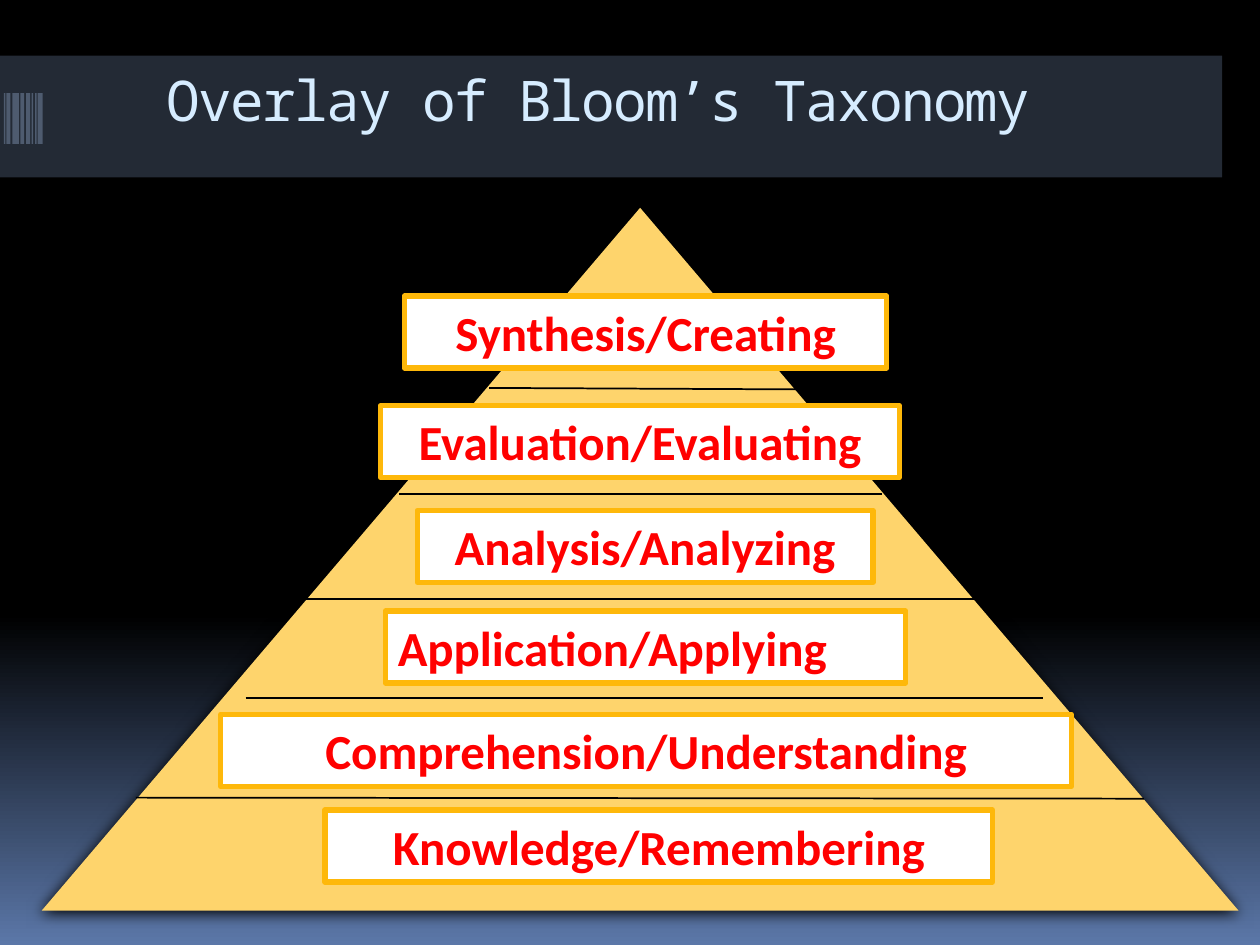
from copy import deepcopy

from lxml import etree
from pptx import Presentation
from pptx.dml.color import RGBColor as RGB
from pptx.enum.shapes import MSO_CONNECTOR as LINK, MSO_SHAPE as SHAPE
from pptx.enum.text import MSO_ANCHOR as ANCHOR, MSO_AUTO_SIZE as SIZE, PP_ALIGN as ALIGN
from pptx.oxml import parse_xml
from pptx.oxml.ns import nsdecls, qn
from pptx.util import Cm, Pt

COLORS = {
    "black": "000000", "sky": "5B77A8", "band": "586A86", "bar": "4E5B6F",
    "title": "D6ECFF", "sand": "FED46C", "white": "FFFFFF", "gold": "FEB80A",
    "red": "FF0000",
}


def color(name):
    return RGB.from_string(COLORS[name])


def block(kind, left, top, width, height, fill):
    """Add a filled shape without outline or shadow, measured in cm."""
    shape = slide.shapes.add_shape(kind, Cm(left), Cm(top), Cm(width), Cm(height))
    shape.shadow.inherit = False
    shape.fill.solid()
    shape.fill.fore_color.rgb = color(fill)
    shape.line.fill.background()
    return shape


deck = Presentation()
deck.slide_width, deck.slide_height = Cm(25.4), Cm(19.05)
slide = deck.slides.add_slide(deck.slide_layouts[6])

# Background: black down to 65 %, then fading to blue
back = slide.background.fill
back.gradient()
back.gradient_angle = 270
first = back.gradient_stops[0]._gs
first.addnext(deepcopy(first))
for stop, (place, name) in zip(back.gradient_stops, [(0, "black"), (0.65, "black"), (1, "sky")]):
    stop.position = place
    stop.color.rgb = color(name)

# Title band with its barcode
band = block(SHAPE.RECTANGLE, 0, 1.12, 24.64, 2.46, "band")
tint = band.fill._xPr.find(".//" + qn("a:srgbClr"))
etree.SubElement(tint, qn("a:alpha")).set("val", "40000")
BARS = [(0.08, 0.03), (0.13, 0.08), (0.25, 0.13), (0.41, 0.08),
        (0.53, 0.08), (0.64, 0.03), (0.71, 0.03), (0.76, 0.1)]
for left, width in BARS:
    block(SHAPE.RECTANGLE, left, 1.88, width, 1.02, "bar")

title = slide.shapes.add_textbox(Cm(1.27), Cm(1.27), Cm(21.59), Cm(2.11))
frame = title.text_frame
frame.word_wrap = True
frame.margin_top = Cm(0.06)
frame.vertical_anchor = ANCHOR.TOP
para = frame.paragraphs[0]
para.alignment = ALIGN.CENTER
run = para.add_run()
run.text = "Overlay of Bloom’s Taxonomy"
run.font.name = "Noto Sans Mono"
run.font.size = Pt(32)
run.font.color.rgb = color("title")
run.font._element.set("spc", "-100")

# Pyramid with a soft shadow
cone = block(SHAPE.ISOSCELES_TRIANGLE, 0.84, 4.19, 24.13, 14.17, "sand")
glow = parse_xml(
    f'<a:outerShdw {nsdecls("a")} blurRad="{Pt(8.5)}" dist="{Pt(1)}" dir="5400000" '
    f'rotWithShape="0"><a:srgbClr val="{COLORS["black"]}"/></a:outerShdw>')
cone._element.spPr.find(qn("a:effectLst")).append(glow)

# Lines between the levels: left, top, right, bottom
RULES = [(9.86, 7.82, 16.21, 7.85), (8.05, 9.96, 17.78, 9.96),
         (6.15, 12.07, 19.69, 12.07), (4.95, 14.07, 21.03, 14.07),
         (2.74, 16.08, 23.06, 16.1)]
for ends in RULES:
    rule = slide.shapes.add_connector(LINK.STRAIGHT, *map(Cm, ends))
    rule.line.color.rgb = color("black")
    rule.line.width = Pt(1)
    etree.SubElement(rule._element.spPr, qn("a:effectLst"))

# Level labels: text, left, top, width, alignment
LEVELS = [
    ("Synthesis/Creating", 8.15, 5.97, 9.73, ALIGN.CENTER),
    ("Evaluation/Evaluating", 7.67, 8.18, 10.46, ALIGN.CENTER),
    ("Analysis/Analyzing", 8.41, 10.29, 9.19, ALIGN.CENTER),
    ("Application/Applying", 7.77, 12.32, 10.49, ALIGN.LEFT),
    ("Comprehension/Understanding", 4.45, 14.4, 17.15, ALIGN.CENTER),
    ("Knowledge/Remembering", 6.55, 16.33, 13.46, ALIGN.CENTER),
]
for text, left, top, width, align in LEVELS:
    label = block(SHAPE.RECTANGLE, left, top, width, 1.45, "white")
    label.line.color.rgb = color("gold")
    label.line.width = Pt(3)
    frame = label.text_frame
    frame.word_wrap = True
    frame.auto_size = SIZE.SHAPE_TO_FIT_TEXT
    frame.vertical_anchor = ANCHOR.TOP
    para = frame.paragraphs[0]
    para.alignment = align
    run = para.add_run()
    run.text = text
    run.font.name = "Calibri"
    run.font.size = Pt(28)
    run.font.bold = True
    run.font.color.rgb = color("red")

deck.save("out.pptx")
